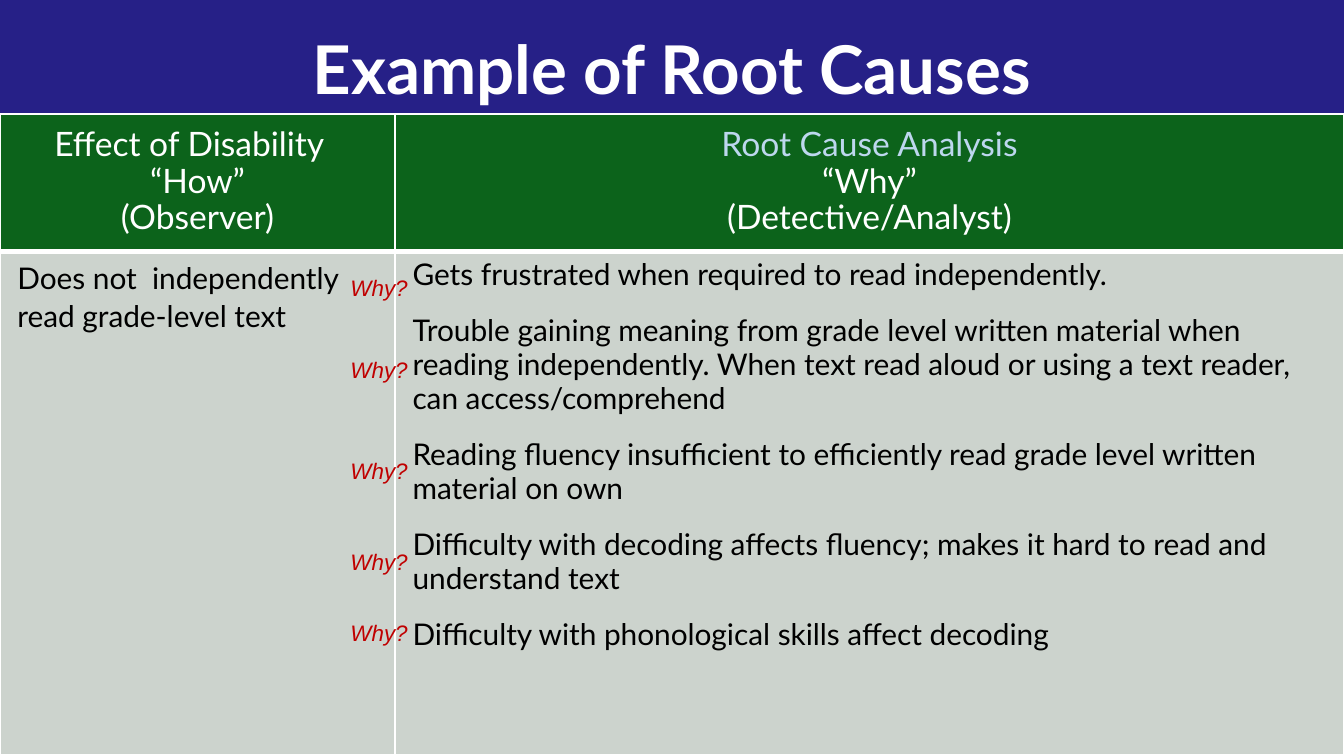
from pptx import Presentation
from pptx.dml.color import RGBColor
from pptx.enum import shapes, text
from pptx.oxml import parse_xml
from pptx.oxml.ns import nsdecls
from pptx.util import Inches, Pt

TITLE = "Example of Root Causes"
HEADERS = [
    ["Effect of Disability  ", "“How”", "(Observer)"],
    ["Root Cause Analysis", "“Why”", "(Detective/Analyst)"],
]
EFFECT = ["Does not  independently read grade-level text"]
CAUSES = [
    "Gets frustrated when required to read independently.",
    "Trouble gaining meaning from grade level written material when reading "
    "independently. When text read aloud or using a text reader, can access/comprehend",
    "Reading fluency insufficient to efficiently read grade level written material on own",
    "Difficulty with decoding affects fluency; makes it hard to read and understand text",
    "Difficulty with phonological skills affect decoding",
]
PROMPT = "Why?"
PROMPT_TOPS = [1.99, 2.6, 3.35, 4.03, 4.56]

THEME = {
    "font": "Lato", "prompt_font": "Arial",
    "title_size": 36, "header_size": 18, "body_size": 16, "prompt_size": 12,
    "banner": "262087", "header": "0C631B", "body": "CCD3CD",
    "white": "FFFFFF", "black": "000000", "accent": "BDD7EE", "prompt": "C00000",
}
COLUMNS = [2.94, 7.06]
ROWS = [1.02, 3.75]


def color(name):
    return RGBColor.from_string(THEME[name])


def style(paragraph, size, ink, font="font", bold=False, italic=False):
    for run in paragraph.runs:
        run.font.name = THEME[font]
        run.font.size = Pt(THEME[size])
        run.font.color.rgb = color(ink)
        run.font.bold = bold
        run.font.italic = italic


def add_borders(cell, top, bottom):
    properties = cell._tc.get_or_add_tcPr()
    for index, (side, width) in enumerate(
            [("lnL", 1), ("lnR", 1), ("lnT", top), ("lnB", bottom)]):
        properties.insert(index, parse_xml(
            f'<a:{side} {nsdecls("a")} w="{Pt(width)}"><a:solidFill>'
            f'<a:srgbClr val="{THEME["white"]}"/></a:solidFill></a:{side}>'))


def fill_cell(cell, lines, fill, size, ink, align, spacings, gap=0):
    cell.margin_left = cell.margin_right = Inches(0.13)
    cell.margin_top = cell.margin_bottom = Inches(0.05)
    cell.fill.solid()
    cell.fill.fore_color.rgb = color(fill)
    cell.text_frame.text = "\n".join(lines)
    for index, paragraph in enumerate(cell.text_frame.paragraphs):
        paragraph.alignment = align
        paragraph.line_spacing = spacings[min(index, len(spacings) - 1)]
        if index and gap:
            paragraph.space_before = Pt(gap)
        style(paragraph, size, ink)


deck = Presentation()
deck.slide_width = Inches(10)
deck.slide_height = deck.slide_width * 9 // 16
slide = deck.slides.add_slide(deck.slide_layouts[6])

banner = slide.shapes.add_shape(
    shapes.MSO_SHAPE.RECTANGLE, Inches(-0.01), 0, Inches(10.01), Inches(1.01))
banner.shadow.inherit = False
banner.fill.solid()
banner.fill.fore_color.rgb = color("banner")
banner.line.fill.background()

title = slide.shapes.add_textbox(0, 0, Inches(10), Inches(1.01)).text_frame
title.word_wrap = True
title.vertical_anchor = text.MSO_ANCHOR.MIDDLE
title.text = TITLE
title.paragraphs[0].alignment = text.PP_ALIGN.CENTER
style(title.paragraphs[0], "title_size", "white", bold=True)

analysis = slide.shapes.add_table(
    2, 2, 0, Inches(0.85), Inches(sum(COLUMNS)), Inches(sum(ROWS))).table
analysis.first_row = analysis.horz_banding = False
for column, width in zip(analysis.columns, COLUMNS):
    column.width = Inches(width)
for row, height in zip(analysis.rows, ROWS):
    row.height = Inches(height)

for index, lines in enumerate(HEADERS):
    fill_cell(analysis.cell(0, index), lines, "header", "header_size", "white",
              text.PP_ALIGN.CENTER, [1.07, 0.9])
    add_borders(analysis.cell(0, index), 1, 3)
style(analysis.cell(0, 1).text_frame.paragraphs[0], "header_size", "accent")

for index, (lines, spacing, gap) in enumerate([(EFFECT, 1.07, 0), (CAUSES, 0.95, 12)]):
    fill_cell(analysis.cell(1, index), lines, "body", "body_size", "black",
              text.PP_ALIGN.LEFT, [spacing], gap)
    add_borders(analysis.cell(1, index), 3, 1)

for top in PROMPT_TOPS:
    prompt = slide.shapes.add_textbox(
        Inches(2.51), Inches(top), Inches(0.67), Inches(0.3)).text_frame
    prompt.word_wrap = True
    prompt.auto_size = text.MSO_AUTO_SIZE.SHAPE_TO_FIT_TEXT
    prompt.text = PROMPT
    style(prompt.paragraphs[0], "prompt_size", "prompt", "prompt_font", italic=True)

deck.save("out.pptx")
